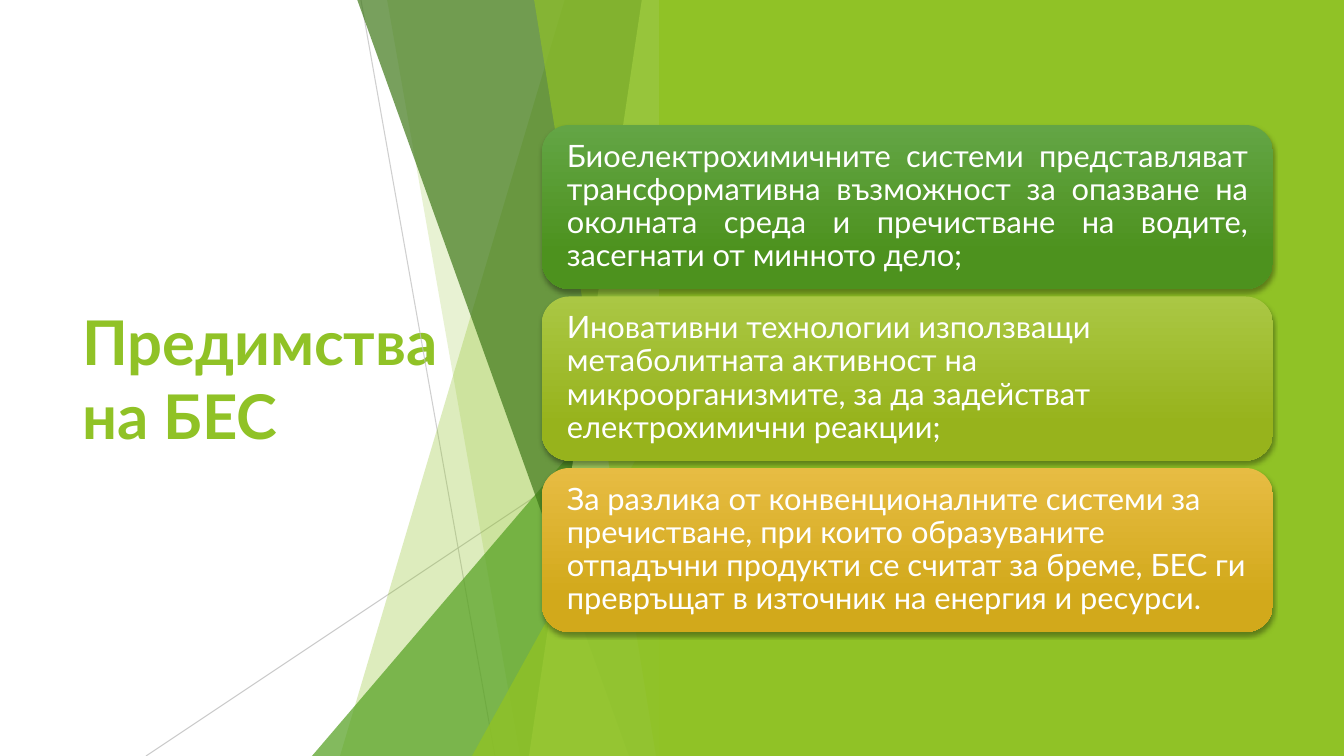
"""Build the slide on the advantages of bioelectrochemical systems."""
from pptx import Presentation
from pptx.dml.color import RGBColor
from pptx.enum.shapes import MSO_CONNECTOR, MSO_SHAPE
from pptx.enum.text import MSO_ANCHOR, PP_ALIGN
from pptx.oxml.ns import qn
from pptx.oxml.xmlchemy import OxmlElement
from pptx.util import Pt

STRAIGHT = MSO_CONNECTOR.STRAIGHT
RECTANGLE, ROUNDED, TRIANGLE = (
    MSO_SHAPE.RECTANGLE, MSO_SHAPE.ROUNDED_RECTANGLE, MSO_SHAPE.ISOSCELES_TRIANGLE)
MIDDLE = MSO_ANCHOR.MIDDLE
LEFT, JUSTIFY = PP_ALIGN.LEFT, PP_ALIGN.JUSTIFY

WHITE = RGBColor(0xFF, 0xFF, 0xFF)
GREY = RGBColor(0xBF, 0xBF, 0xBF)
LIME = RGBColor(0x90, 0xC2, 0x26)
PALE_LIME = RGBColor(0xC0, 0xE4, 0x74)
GREEN = RGBColor(0x54, 0xA0, 0x21)
DARK_GREEN = RGBColor(0x3F, 0x78, 0x19)

WIDTH, HEIGHT = 1344, 756
SCALE = 12192000 / WIDTH
FONT = "Lato"

TITLE = "Предимства на БЕС"
TITLE_BOX = (72, 152, 391, 452)
ADVANTAGES = [
    ("Биоелектрохимичните системи представляват трансформативна възможност за "
     "опазване на околната среда и пречистване на водите, засегнати от минното дело;",
     RGBColor(0x63, 0xA5, 0x45), RGBColor(0x4D, 0x92, 0x1E), JUSTIFY),
    ("Иновативни технологии използващи метаболитната активност на "
     "микроорганизмите, за да задействат електрохимични реакции;",
     RGBColor(0xAA, 0xC7, 0x44), RGBColor(0x97, 0xB3, 0x1C), LEFT),
    ("За разлика от конвенционалните системи за пречистване, при които "
     "образуваните отпадъчни продукти се считат за бреме, БЕС ги превръщат в "
     "източник на енергия и ресурси.",
     RGBColor(0xE7, 0xBC, 0x43), RGBColor(0xD2, 0xA9, 0x1B), LEFT),
]
CARDS_LEFT, CARDS_TOP, CARDS_BOTTOM = 542, 125, 632
CARD_WIDTH, CARD_HEIGHT, CARD_INSET = 731, 164, 17

RAYS = [((361, 0), (495, 756), 75), ((671, 406), (146, 756), 80)]
FACETS_RIGHT, FACETS_TOP = 671, -1
FACETS = [
    ("band", 565, 340, LIME, 30),
    ("band", 387, 520, LIME, 20),
    ("corner", 312, 336, GREEN, 72),
    ("band", 357, 629, DARK_GREEN, 70),
    ("band", 642, 529, PALE_LIME, 70),
    ("band", 534, 656, LIME, 65),
    ("corner", 472, 396, LIME, 80),
]
PANEL_LEFT = 659


def emu(*lengths):
    return [round(length * SCALE) for length in lengths]


def set_opacity(fill, percent):
    colour = fill._xPr.find(".//" + qn("a:srgbClr"))
    alpha = OxmlElement("a:alpha")
    alpha.set("val", str(percent * 1000))
    colour.append(alpha)


def paint(shape, colour, opacity=100):
    shape.shadow.inherit = False
    shape.fill.solid()
    shape.fill.fore_color.rgb = colour
    shape.line.fill.background()
    if opacity < 100:
        set_opacity(shape.fill, opacity)


def write(shape, text, size, colour, bold=False, align=LEFT, spacing=1.0, inset=None):
    frame = shape.text_frame
    frame.word_wrap = True
    frame.vertical_anchor = MIDDLE
    if inset is not None:
        frame.margin_left, frame.margin_top, frame.margin_right, frame.margin_bottom = emu(
            *[inset] * 4)
    paragraph = frame.paragraphs[0]
    paragraph.alignment = align
    paragraph.line_spacing = spacing
    run = paragraph.add_run()
    run.text = text
    run.font.name, run.font.size, run.font.bold = FONT, Pt(size), bold
    run.font.color.rgb = colour


def add_ray(shapes, start, end, opacity):
    ray = shapes.add_connector(STRAIGHT, *emu(*start, *end))
    ray.line.width = Pt(0.75)
    ray.line.color.rgb = GREY
    set_opacity(ray.line.fill, opacity)
    ray._element.spPr.append(OxmlElement("a:effectLst"))


def add_band(shapes, top_left, bottom_left):
    outline = shapes.build_freeform(*emu(top_left, FACETS_TOP))
    corners = [(FACETS_RIGHT, FACETS_TOP), (FACETS_RIGHT, HEIGHT), (bottom_left, HEIGHT)]
    outline.add_line_segments([emu(*corner) for corner in corners], close=True)
    return outline.convert_to_shape()


def add_corner(shapes, left, top):
    corner = shapes.add_shape(
        TRIANGLE, *emu(left, top, FACETS_RIGHT - left, HEIGHT - top))
    corner.adjustments[0] = 1
    return corner


def add_card(shapes, top, text, light, deep, align):
    card = shapes.add_shape(ROUNDED, *emu(CARDS_LEFT, top, CARD_WIDTH, CARD_HEIGHT))
    card.line.fill.background()
    card.fill.gradient()
    card.fill.gradient_angle = 270
    for stop, colour, position in zip(card.fill.gradient_stops, (light, deep), (0, 0.78)):
        stop.color.rgb = colour
        stop.position = position
    card.shadow.inherit = False
    shadow = OxmlElement("a:outerShdw")
    for name, value in (("blurRad", Pt(3)), ("dist", Pt(2)), ("dir", 5400000)):
        shadow.set(name, str(int(value)))
    black = OxmlElement("a:srgbClr")
    black.set("val", "000000")
    alpha = OxmlElement("a:alpha")
    alpha.set("val", "35000")
    black.append(alpha)
    shadow.append(black)
    card._element.spPr.find(qn("a:effectLst")).append(shadow)
    write(card, text, 22, WHITE, align=align, spacing=0.9, inset=CARD_INSET)


def main():
    deck = Presentation()
    deck.slide_width, deck.slide_height = emu(WIDTH, HEIGHT)
    slide = deck.slides.add_slide(deck.slide_layouts[5])
    shapes = slide.shapes

    title = shapes.title
    title.left, title.top, title.width, title.height = emu(*TITLE_BOX)
    write(title, TITLE, 44, LIME, bold=True)

    for ray in RAYS:
        add_ray(shapes, *ray)
    builders = {"band": add_band, "corner": add_corner}
    for kind, first, second, colour, opacity in FACETS:
        paint(builders[kind](shapes, first, second), colour, opacity)
    panel = shapes.add_shape(RECTANGLE, *emu(PANEL_LEFT, 0, WIDTH - PANEL_LEFT, HEIGHT))
    paint(panel, LIME)

    pitch = (CARDS_BOTTOM - CARDS_TOP - CARD_HEIGHT) / (len(ADVANTAGES) - 1)
    for index, advantage in enumerate(ADVANTAGES):
        add_card(shapes, CARDS_TOP + index * pitch, *advantage)

    deck.save("out.pptx")


if __name__ == "__main__":
    main()
